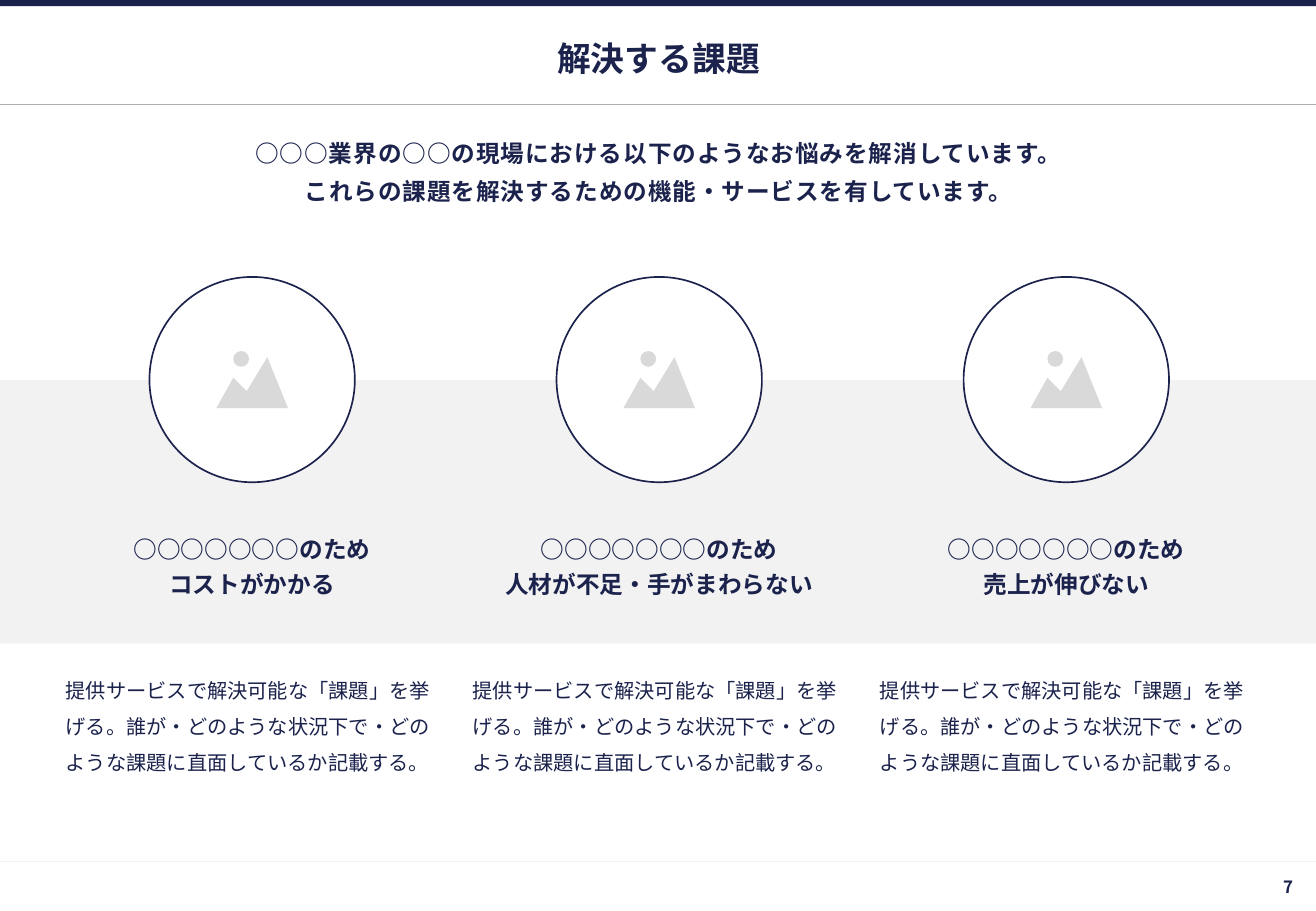
"""Build the slide that presents three customer problems to solve."""
from lxml import etree
from pptx import Presentation
from pptx import util as u
from pptx.dml.color import RGBColor
from pptx.enum import shapes, text
from pptx.oxml import ns

FONT = "Noto Sans CJK JP"
NAVY, PALE, SILVER, GRAY, WHITE = "1B224C", "F2F2F2", "D9D9D9", "AFAFAF", "FFFFFF"
SLIDE_WIDTH, MARGIN, CONTENT_WIDTH = 10.83, 0.5, 9.84
COLUMN_WIDTH, COLUMN_STEP = 3.15, 3.35
CIRCLE_SIZE = 1.69


def paint(shape, fill, line=None):
    """Give a shape a flat fill and an optional 1 pt outline."""
    shape.shadow.inherit = False
    shape.fill.solid()
    shape.fill.fore_color.rgb = RGBColor.from_string(fill)
    if line:
        shape.line.color.rgb = RGBColor.from_string(line)
        shape.line.width = u.Pt(1)
    else:
        shape.line.fill.background()


def write(content, left, top, width, height, size=14, bold=True, align="CENTER",
          anchor="TOP", after=0, spacing=1, tracking=0, right_inset=0.04):
    """Add a text box with one paragraph for each line of the content."""
    box = slide.shapes.add_textbox(*map(u.Inches, (left, top, width, height)))
    frame = box.text_frame
    frame.word_wrap = True
    frame.vertical_anchor = text.MSO_ANCHOR[anchor]
    frame.margin_left = frame.margin_top = frame.margin_bottom = u.Inches(0.04)
    frame.margin_right = u.Inches(right_inset)
    frame.text = content
    for paragraph in frame.paragraphs:
        paragraph.alignment = text.PP_ALIGN[align]
        paragraph.space_after = u.Pt(after)
        paragraph.line_spacing = spacing
        for run in paragraph.runs:
            run.font.name = FONT
            run.font.size = u.Pt(size)
            run.font.bold = bold
            run.font.color.rgb = RGBColor.from_string(NAVY)
            properties = run._r.get_or_add_rPr()
            properties.set("spc", str(tracking))
            etree.SubElement(properties, ns.qn("a:ea"), typeface=FONT)


presentation = Presentation()
presentation.slide_width = u.Inches(SLIDE_WIDTH)
presentation.slide_height = u.Inches(7.5)
slide = presentation.slides.add_slide(presentation.slide_layouts[6])

for y, color in ((7.09, PALE), (0.86, GRAY)):
    rule = slide.shapes.add_connector(
        shapes.MSO_CONNECTOR.STRAIGHT, 0, u.Inches(y), u.Inches(SLIDE_WIDTH), u.Inches(y))
    rule.line.color.rgb = RGBColor.from_string(color)
    rule.line.width = u.Pt(0.75)
    etree.SubElement(rule._element.spPr, ns.qn("a:effectLst"))

for top, height, color in ((0, 0.05, NAVY), (3.13, 2.17, PALE)):
    band = slide.shapes.add_shape(
        shapes.MSO_SHAPE.RECTANGLE, 0, u.Inches(top), u.Inches(SLIDE_WIDTH), u.Inches(height))
    paint(band, color)

write("解決する課題", MARGIN, 0.26, CONTENT_WIDTH, 0.43, size=20, anchor="MIDDLE")
write("○○○業界の○○の現場における以下のようなお悩みを解消しています。\n"
      "これらの課題を解決するための機能・サービスを有しています。",
      MARGIN, 1.1, CONTENT_WIDTH, 0.67, after=6, tracking=50)
write("7", 8.9, 7.1, 1.94, 0.4, size=10, align="RIGHT", anchor="MIDDLE", right_inset=0.2)

problems = ("コストがかかる", "人材が不足・手がまわらない", "売上が伸びない")
description = ("提供サービスで解決可能な「課題」を挙げる。"
               "誰が・どのような状況下で・どのような課題に直面しているか記載する。")
mountain = ((0.42, 0.05), (0.59, 0.47), (0, 0.47), (0.14, 0.22), (0.25, 0.33))

for column, problem in enumerate(problems):
    left = MARGIN + column * COLUMN_STEP
    write(f"○○○○○○○のため\n{problem}", left, 4.29, COLUMN_WIDTH, 0.75,
          anchor="MIDDLE", after=4)
    write(description, left, 5.44, COLUMN_WIDTH, 1.18, size=12, bold=False,
          align="LEFT", after=4, spacing=1.5)

    circle_left = left + (COLUMN_WIDTH - CIRCLE_SIZE) / 2
    icon_left, icon_top = left + 1.28, 2.89
    for x, y, size, fill, line in ((circle_left, 2.28, CIRCLE_SIZE, WHITE, NAVY),
                                   (icon_left + 0.14, icon_top, 0.13, SILVER, None)):
        circle = slide.shapes.add_shape(
            shapes.MSO_SHAPE.OVAL, u.Inches(x), u.Inches(y), u.Inches(size), u.Inches(size))
        paint(circle, fill, line)

    points = [(u.Inches(icon_left + x), u.Inches(icon_top + y)) for x, y in mountain]
    builder = slide.shapes.build_freeform(*points[0])
    builder.add_line_segments(points[1:], close=True)
    paint(builder.convert_to_shape(), SILVER)

presentation.save("out.pptx")
